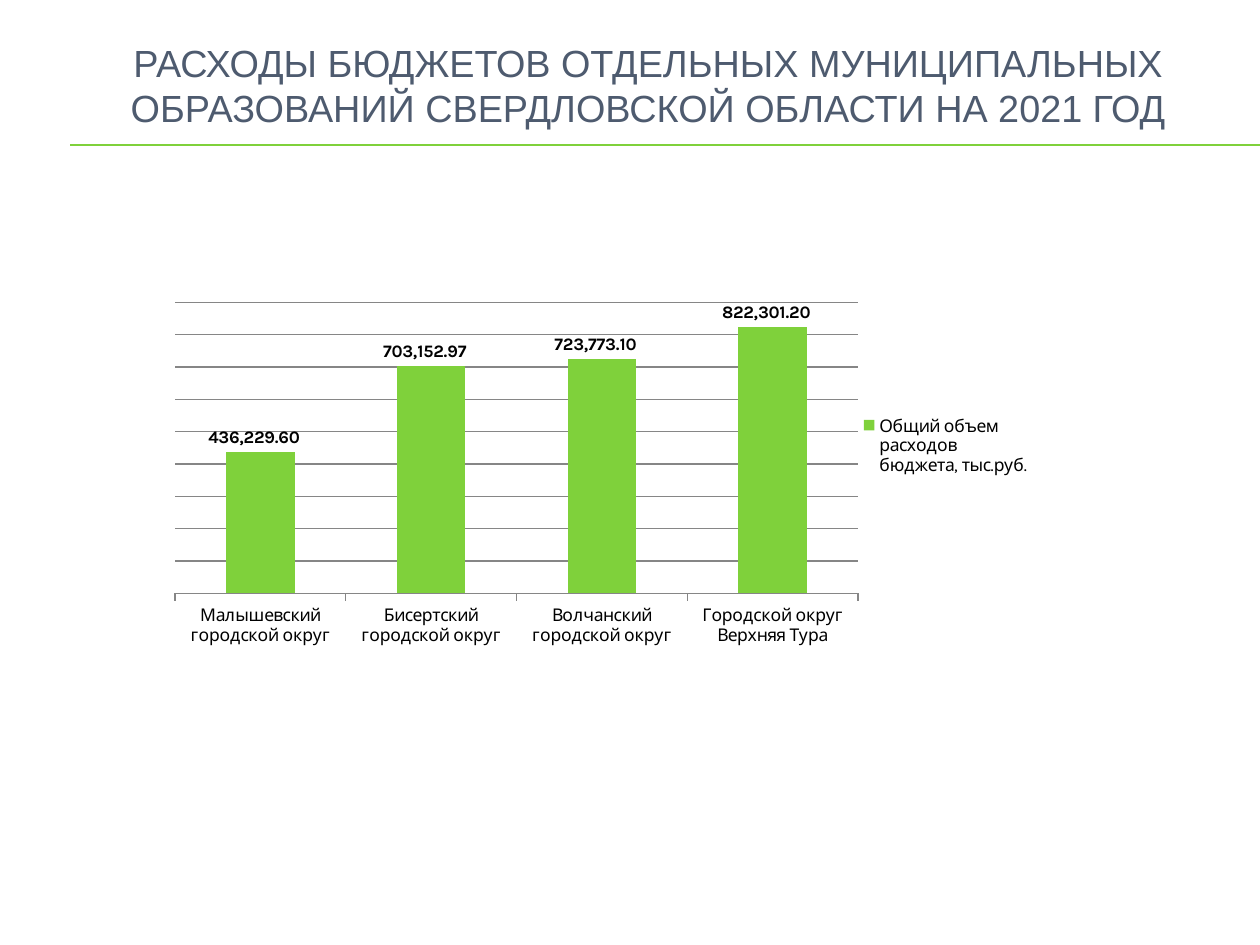
"""Build the slide on municipal budget expenditure for 2021."""
from dataclasses import dataclass

from lxml.etree import SubElement
from pptx import Presentation
from pptx.chart.data import CategoryChartData
from pptx.dml.color import RGBColor
from pptx.enum.chart import XL_CHART_TYPE, XL_LABEL_POSITION, XL_LEGEND_POSITION, XL_TICK_MARK
from pptx.enum.shapes import MSO_CONNECTOR
from pptx.enum.text import MSO_ANCHOR, PP_ALIGN
from pptx.oxml.ns import qn
from pptx.util import Pt

HEADING = "РАСХОДЫ БЮДЖЕТОВ ОТДЕЛЬНЫХ МУНИЦИПАЛЬНЫХ ОБРАЗОВАНИЙ СВЕРДЛОВСКОЙ ОБЛАСТИ НА 2021 ГОД"
MEASURE = "Общий объем расходов бюджета, тыс.руб."
EXPENDITURE = {
    "Малышевский городской округ": 436229.60,
    "Бисертский городской округ": 703152.97,
    "Волчанский городской округ": 723773.10,
    "Городской округ Верхняя Тура": 822301.20,
}
AMOUNT_FORMAT = r"_-* #,##0.00_р_._-;\-* #,##0.00_р_._-"
PLOT_AREA = {"x": 0.02, "y": 0.05, "w": 0.78, "h": 0.77}
LEGEND_AREA = {"x": 0.8, "y": 0.34, "w": 0.2, "h": 0.18}
RULE_LEFT, RULE_HEIGHTS = 40.3, (82.9, 83.2)
SLIDE_WIDTH, SLIDE_HEIGHT = 720, 540


@dataclass(frozen=True)
class Theme:
    accent: RGBColor = RGBColor(0x7F, 0xD1, 0x3B)
    heading: RGBColor = RGBColor(0x4E, 0x5B, 0x6F)
    text: RGBColor = RGBColor(0, 0, 0)
    grid: RGBColor = RGBColor(0x86, 0x86, 0x86)
    heading_font: str = "Arial"
    chart_font: str = "Karla"
    heading_size: float = 21.6
    chart_size: float = 10
    line_width: float = 0.75


THEME = Theme()


def style_line(line, color):
    line.color.rgb = color
    line.width = Pt(THEME.line_width)


def style_font(font, name, size, color):
    font.name = name
    font.size = Pt(size)
    font.color.rgb = color


def add_rules(slide):
    for height in RULE_HEIGHTS:
        rule = slide.shapes.add_connector(
            MSO_CONNECTOR.STRAIGHT, Pt(RULE_LEFT), Pt(height), Pt(SLIDE_WIDTH), Pt(height))
        style_line(rule.line, THEME.accent)
        SubElement(rule._element.spPr, qn("a:effectLst"))


def add_heading(slide):
    frame = slide.shapes.add_textbox(Pt(39.6), Pt(11.5), Pt(661.7), Pt(74.2)).text_frame
    frame.word_wrap = True
    frame.vertical_anchor = MSO_ANCHOR.MIDDLE
    paragraph = frame.paragraphs[0]
    paragraph.alignment = PP_ALIGN.CENTER
    heading = paragraph.add_run()
    heading.text = HEADING
    style_font(heading.font, THEME.heading_font, THEME.heading_size, THEME.heading)


def place(part, index, settings):
    layout = part.find(qn("c:layout"))
    if layout is None:
        layout = SubElement(part, qn("c:layout"))
        part.insert(index, layout)
    manual = SubElement(layout, qn("c:manualLayout"))
    for tag, value in settings.items():
        SubElement(manual, qn(f"c:{tag}")).set("val", str(value))


def add_expenditure(slide):
    budgets = CategoryChartData(number_format="#,##0.00")
    budgets.categories = list(EXPENDITURE)
    budgets.add_series(MEASURE, list(EXPENDITURE.values()))
    chart = slide.shapes.add_chart(
        XL_CHART_TYPE.COLUMN_CLUSTERED, Pt(90), Pt(162), Pt(500.4), Pt(216), budgets).chart
    chart.has_title = False
    style_font(chart.font, THEME.chart_font, THEME.chart_size, THEME.text)
    chart.has_legend = True
    chart.legend.position = XL_LEGEND_POSITION.RIGHT
    chart.legend.include_in_layout = False

    districts, amounts = chart.category_axis, chart.value_axis
    districts.major_tick_mark = XL_TICK_MARK.OUTSIDE
    style_line(districts.format.line, THEME.grid)
    amounts.visible = False
    amounts.minimum_scale, amounts.maximum_scale, amounts.major_unit = 0, 900000, 100000
    amounts.has_major_gridlines = True
    style_line(amounts.major_gridlines.format.line, THEME.grid)

    columns = chart.plots[0]
    columns.vary_by_categories = False
    columns.gap_width = 150
    expenses = columns.series[0]
    expenses.format.fill.solid()
    expenses.format.fill.fore_color.rgb = THEME.accent
    labels = expenses.data_labels
    labels.show_value = True
    labels.position = XL_LABEL_POSITION.OUTSIDE_END
    labels.number_format = AMOUNT_FORMAT
    labels.number_format_is_linked = False
    labels.font.bold = True
    style_font(labels.font, THEME.chart_font, THEME.chart_size, THEME.text)

    edges = {"xMode": "edge", "yMode": "edge"}
    chart_parts = chart._chartSpace.chart
    place(chart_parts.plotArea, 0, {"layoutTarget": "inner", **edges, **PLOT_AREA})
    place(chart_parts.find(qn("c:legend")), 1, {**edges, **LEGEND_AREA})


def main():
    deck = Presentation()
    deck.slide_width, deck.slide_height = Pt(SLIDE_WIDTH), Pt(SLIDE_HEIGHT)
    slide = deck.slides.add_slide(deck.slide_layouts[6])
    add_rules(slide)
    add_heading(slide)
    add_expenditure(slide)
    deck.save("out.pptx")


if __name__ == "__main__":
    main()
